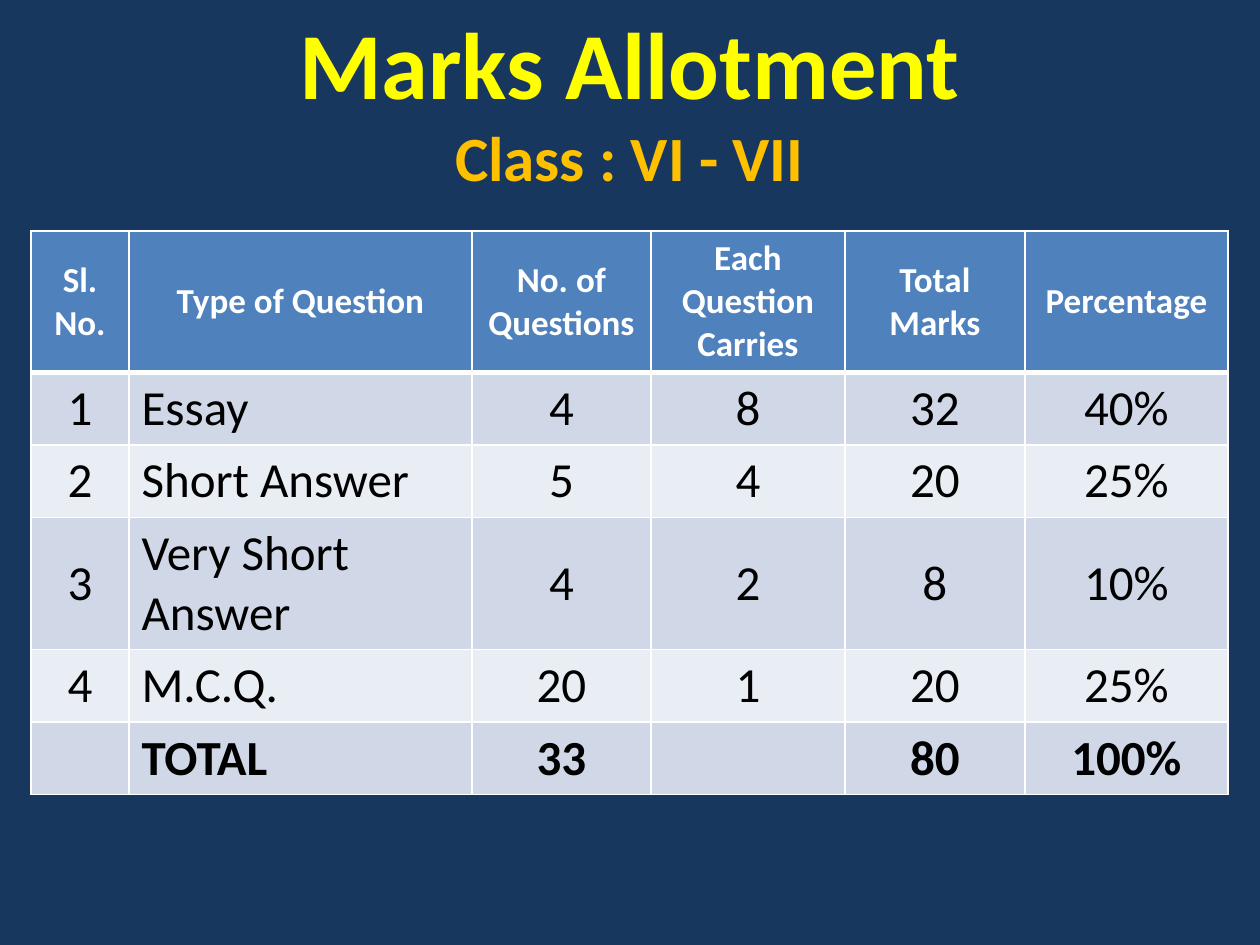
from dataclasses import dataclass

from lxml.etree import SubElement
from pptx import Presentation
from pptx.dml.color import RGBColor
from pptx.enum.text import MSO_ANCHOR, MSO_AUTO_SIZE, PP_ALIGN
from pptx.oxml.ns import qn
from pptx.util import Emu, Pt

PX = 914400 // 126


@dataclass(frozen=True)
class Theme:
    font: str = "Calibri"
    background: str = "17375E"
    title: str = "FFFF00"
    subtitle: str = "FFC000"
    header: str = "4F81BD"
    bands: tuple = ("D0D8E8", "E9EDF4")
    header_text: str = "FFFFFF"
    body_text: str = "000000"
    grid: str = "FFFFFF"
    title_size: int = 54
    subtitle_size: int = 36
    header_size: int = 20
    body_size: int = 28
    grid_width: int = 1
    header_rule: int = 3


class SlideBuilder:
    """Draws styled elements on one slide, with lengths in px."""

    def __init__(self, slide, theme):
        self.slide = slide
        self.theme = theme
        slide.background.fill.solid()
        slide.background.fill.fore_color.rgb = RGBColor.from_string(theme.background)

    def style(self, font, size, color, bold):
        font.name = self.theme.font
        font.size = Pt(size)
        font.bold = bold
        font.color.rgb = RGBColor.from_string(color)

    def title(self, heading, subheading, left, top, width, height):
        theme = self.theme
        title = self.slide.shapes.title
        title.left, title.top = Emu(left * PX), Emu(top * PX)
        title.width, title.height = Emu(width * PX), Emu(height * PX)
        frame = title.text_frame
        frame.word_wrap = True
        frame.auto_size = MSO_AUTO_SIZE.NONE
        frame.vertical_anchor = MSO_ANCHOR.MIDDLE
        paragraph = frame.paragraphs[0]
        paragraph.alignment = PP_ALIGN.CENTER
        heading_run = paragraph.add_run()
        heading_run.text = heading
        self.style(heading_run.font, theme.title_size, theme.title, True)
        paragraph.add_line_break()
        subheading_run = paragraph.add_run()
        subheading_run.text = subheading
        self.style(subheading_run.font, theme.subtitle_size, theme.subtitle, True)

    def borders(self, cell, bottom):
        properties = cell._tc.get_or_add_tcPr()
        thin = self.theme.grid_width
        for side, width in (("L", thin), ("R", thin), ("T", thin), ("B", bottom)):
            line = SubElement(properties, qn(f"a:ln{side}"), w=str(Pt(width)))
            fill = SubElement(line, qn("a:solidFill"))
            SubElement(fill, qn("a:srgbClr"), val=self.theme.grid)

    def cell(self, cell, text, size, color, bold, fill, alignment, bottom):
        self.borders(cell, bottom)
        cell.fill.solid()
        cell.fill.fore_color.rgb = RGBColor.from_string(fill)
        cell.vertical_anchor = MSO_ANCHOR.MIDDLE
        cell.text = text
        paragraph = cell.text_frame.paragraphs[0]
        paragraph.alignment = alignment
        self.style(paragraph.font, size, color, bold)

    def table(self, rows, column_widths, row_height, left, top, height, left_column):
        theme = self.theme
        frame = self.slide.shapes.add_table(
            len(rows), len(column_widths), Emu(left * PX), Emu(top * PX),
            Emu(sum(column_widths) * PX), Emu(height * PX))
        table = frame.table
        for column, width in zip(table.columns, column_widths):
            column.width = Emu(width * PX)
        for r, row in enumerate(rows):
            table.rows[r].height = Emu(row_height * PX)
            is_header = r == 0
            is_total = r == len(rows) - 1
            size = theme.header_size if is_header else theme.body_size
            color = theme.header_text if is_header else theme.body_text
            fill = theme.header if is_header else theme.bands[(r - 1) % 2]
            bottom = theme.header_rule if is_header else theme.grid_width
            for c, text in enumerate(row):
                is_left = c == left_column and not is_header
                alignment = PP_ALIGN.LEFT if is_left else PP_ALIGN.CENTER
                self.cell(table.cell(r, c), text, size, color,
                          is_header or is_total, fill, alignment, bottom)
        frame.height = Emu(height * PX)


MARKS = [
    ("Sl. No.", "Type of Question", "No. of Questions",
     "Each Question Carries", "Total Marks", "Percentage"),
    ("1", "Essay", "4", "8", "32", "40%"),
    ("2", "Short Answer", "5", "4", "20", "25%"),
    ("3", "Very Short Answer", "4", "2", "8", "10%"),
    ("4", "M.C.Q.", "20", "1", "20", "25%"),
    ("", "TOTAL", "33", "", "80", "100%"),
]


def main():
    presentation = Presentation()
    presentation.slide_width = Emu(1260 * PX)
    presentation.slide_height = Emu(945 * PX)
    slide = presentation.slides.add_slide(presentation.slide_layouts[5])
    builder = SlideBuilder(slide, Theme())
    builder.title("Marks Allotment", "Class : VI - VII",
                  left=15, top=10, width=1229, height=179)
    builder.table(MARKS, column_widths=(98, 343, 179, 194, 180, 203),
                  row_height=52, left=31, top=231, height=554, left_column=1)
    presentation.save("out.pptx")


if __name__ == "__main__":
    main()
